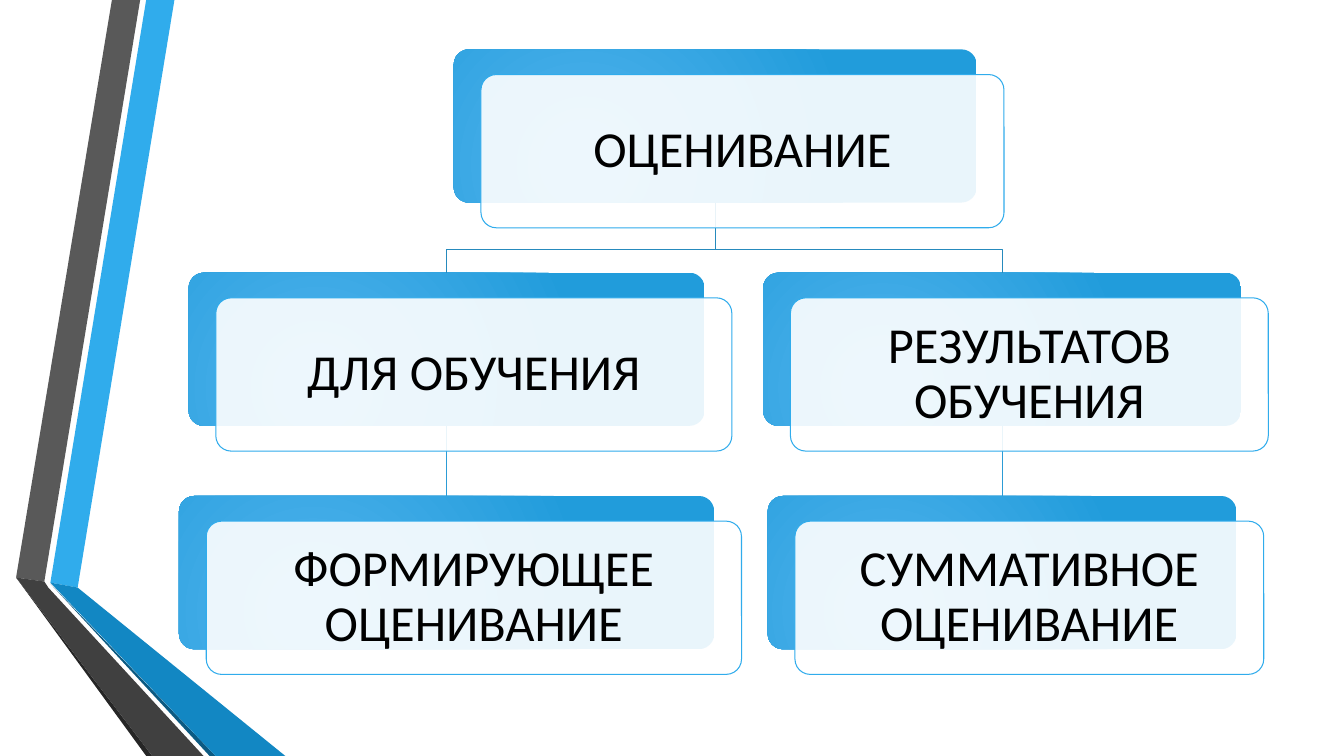
from lxml import etree
from pptx import Presentation
from pptx import util as u
from pptx.dml.color import RGBColor
from pptx.enum import shapes, text
from pptx.oxml.ns import qn

WIDTH, HEIGHT = u.Inches(13.333), u.Inches(7.5)
SLIDE_BOX = (0, 0, WIDTH, HEIGHT)

RIBBONS = [
    ("30ACEC", [(3.75, 77.07), (5.78, 77.73), (12.98, 0), (10.88, 0)]),
    ("595959", [(10.43, 0), (8.33, 0), (1.2, 76.4), (3.3, 76.93)]),
    ("262626", [(1.2, 76.4), (10.88, 100), (11.33, 100)]),
    ("0C5A82", [(3.75, 77.2), (15.6, 100), (16.05, 100)]),
    ("1287C3", [(3.75, 77.07), (16.05, 100), (21.23, 100), (5.78, 77.73)]),
    ("404040", [(15.15, 100), (3.6, 77.73), (3.3, 76.93), (1.2, 76.4), (11.33, 100)]),
]

CARDS = {
    "root": ("ОЦЕНИВАНИЕ", 49.26, 0, 48),
    "for_learning": ("ДЛЯ ОБУЧЕНИЯ", 24.61, 1, 47.36),
    "formative": ("ФОРМИРУЮЩЕЕ ОЦЕНИВАНИЕ", 24.61, 2, 49.12),
    "of_results": ("РЕЗУЛЬТАТОВ ОБУЧЕНИЯ", 75.58, 1, 43.85),
    "summative": ("СУММАТИВНОЕ ОЦЕНИВАНИЕ", 75.58, 2, 43.02),
}
ROW_PITCH, CARD_HEIGHT = 35.73, 24.52
SHIFT_X, SHIFT_Y = 2.5, 4.03
BEND = 0.67


def colour(value):
    return RGBColor.from_string(value)


def point(box, x, y):
    left, top, width, height = box
    return round(left + width * x / 100), round(top + height * y / 100)


def area(box, x, y, width, height):
    left, top = point(box, x, y)
    right, bottom = point(box, x + width, y + height)
    return left, top, right - left, bottom - top


def outline(slide, points, close):
    builder = slide.shapes.build_freeform(*points[0], scale=1.0)
    builder.add_line_segments(points[1:], close=close)
    shape = builder.convert_to_shape()
    shape.shadow.inherit = False
    return shape


def stroke(line, value):
    line.color.rgb = colour(value)
    line.width = u.Pt(0.75)


def add_ribbons(slide, box):
    for value, corners in RIBBONS:
        ribbon = outline(slide, [point(box, *corner) for corner in corners], True)
        ribbon.fill.solid()
        ribbon.fill.fore_color.rgb = colour(value)
        ribbon.line.fill.background()


def rounded(slide, place):
    card = slide.shapes.add_shape(shapes.MSO_SHAPE.ROUNDED_RECTANGLE, *place)
    card.adjustments[0] = 0.1
    card.shadow.inherit = False
    return card


def add_back(slide, place):
    back = rounded(slide, place)
    back.line.fill.background()
    back.fill.gradient()
    for stop, position, value in zip(back.fill.gradient_stops, (0, 1), ("51B3ED", "219CDB")):
        stop.position = position
        stop.color.rgb = colour(value)
    gradient = back._element.spPr.find(qn("a:gradFill"))
    linear = gradient.find(qn("a:lin"))
    radial = etree.Element(qn("a:path"), {"path": "circle"})
    etree.SubElement(radial, qn("a:fillToRect"), l="50000", t="100000", r="100000", b="50000")
    gradient.replace(linear, radial)
    return back


def add_front(slide, place, label):
    front = rounded(slide, place)
    front.fill.solid()
    front.fill.fore_color.rgb = colour("FFFFFF")
    white = front._element.spPr.find(qn("a:solidFill")).find(qn("a:srgbClr"))
    etree.SubElement(white, qn("a:alpha"), val="90000")
    stroke(front.line, "30ACEC")
    frame = front.text_frame
    frame.word_wrap = True
    frame.vertical_anchor = text.MSO_ANCHOR.MIDDLE
    frame.margin_left = frame.margin_right = u.Inches(0.15)
    frame.margin_top = frame.margin_bottom = u.Inches(0.15)
    paragraph = frame.paragraphs[0]
    paragraph.alignment = text.PP_ALIGN.CENTER
    paragraph.line_spacing = 0.9
    run = paragraph.add_run()
    run.text = label
    run.font.name = "Calibri"
    run.font.size = u.Pt(36)
    run.font.color.rgb = colour("000000")


def add_branch(slide, parent, child):
    start_x, end_x = (card.left + card.width // 2 for card in (parent, child))
    start_y, end_y = parent.top + parent.height, child.top
    bend_y = round(start_y + (end_y - start_y) * BEND)
    branch = outline(slide, [(start_x, start_y), (start_x, bend_y), (end_x, bend_y), (end_x, end_y)], False)
    branch.fill.background()
    stroke(branch.line, "268ABD")


def add_drop(slide, parent, child):
    drop = slide.shapes.add_connector(shapes.MSO_CONNECTOR.STRAIGHT, 0, 0, 0, 0)
    drop.begin_connect(parent, 2)
    drop.end_connect(child, 0)
    stroke(drop.line, "2C9CD6")
    etree.SubElement(drop._element.spPr, qn("a:effectLst"))


def add_hierarchy(slide, box):
    backs = {}
    for name, (label, centre, row, width) in CARDS.items():
        backs[name] = add_back(slide, area(box, centre - width / 2, row * ROW_PITCH, width, CARD_HEIGHT))
    for middle, leaf in (("of_results", "summative"), ("for_learning", "formative")):
        add_drop(slide, backs[middle], backs[leaf])
        add_branch(slide, backs["root"], backs[middle])
    for label, centre, row, width in CARDS.values():
        place = area(box, centre - width / 2 + SHIFT_X, row * ROW_PITCH + SHIFT_Y, width, CARD_HEIGHT)
        add_front(slide, place, label)


def main():
    deck = Presentation()
    deck.slide_width, deck.slide_height = WIDTH, HEIGHT
    slide = deck.slides.add_slide(deck.slide_layouts[6])
    add_ribbons(slide, SLIDE_BOX)
    add_hierarchy(slide, area(SLIDE_BOX, 13.28, 6.53, 81.08, 82.67))
    deck.save("out.pptx")


if __name__ == "__main__":
    main()
